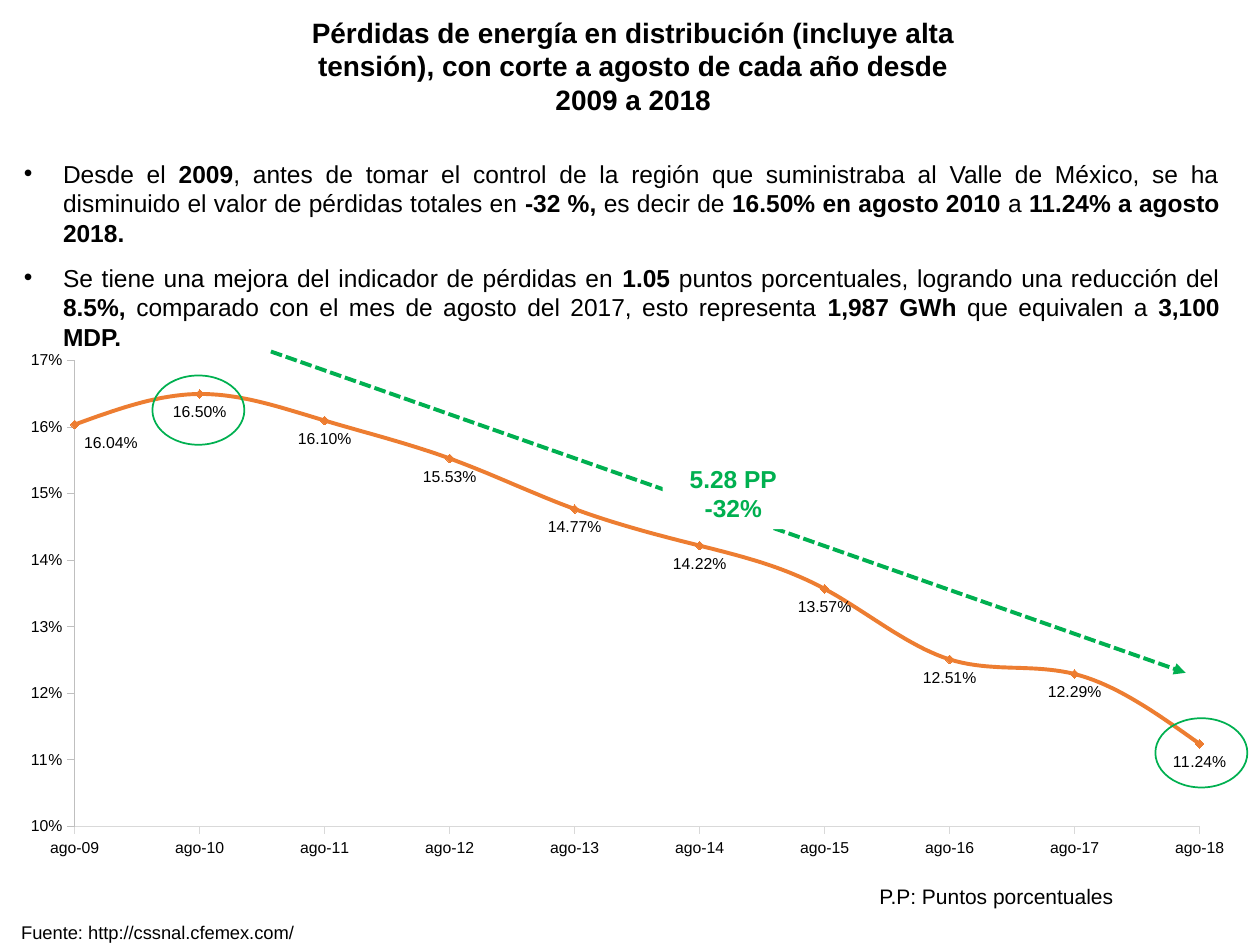
from dataclasses import dataclass

from lxml import etree
from pptx import Presentation
from pptx.chart.data import CategoryChartData
from pptx.dml.color import RGBColor
from pptx.enum.chart import (XL_AXIS_CROSSES, XL_CHART_TYPE, XL_LABEL_POSITION,
                             XL_MARKER_STYLE, XL_TICK_MARK)
from pptx.enum.dml import MSO_LINE
from pptx.enum.shapes import MSO_CONNECTOR, MSO_SHAPE
from pptx.enum.text import MSO_ANCHOR, MSO_AUTO_SIZE, PP_ALIGN
from pptx.oxml import parse_xml
from pptx.oxml.ns import nsdecls, qn
from pptx.util import Inches, Pt

COLORS = {"text": "000000", "line": "ED7D31", "accent": "00B050", "paper": "FFFFFF",
          "category axis": "D9D9D9", "value axis": "BFBFBF"}
FONT = "Arial"
COLUMNS, ROWS = 100, 75


@dataclass(frozen=True)
class Box:
    """A place on the slide, in grid columns and rows."""
    left: float
    top: float
    width: float
    height: float

    def lengths(self) -> tuple:
        return (column(self.left), row(self.top), column(self.width), row(self.height))


@dataclass(frozen=True)
class Note:
    box: Box
    text: str
    size: float


TITLE = ("Pérdidas de energía en distribución (incluye alta tensión), "
         "con corte a agosto de cada año desde 2009 a 2018")
# Every second piece of a bullet is bold
BULLETS = [
    ["Desde el ", "2009", ", antes de tomar el control de la región que suministraba al Valle "
     "de México, se ha disminuido el valor de pérdidas totales en ", "-32 %, ",
     "es decir de ", "16.50% en agosto 2010 ", "a ", "11.24% a agosto 2018."],
    ["Se tiene una mejora del indicador de pérdidas en ", "1.05",
     " puntos porcentuales, logrando una reducción del ", "8.5%, ",
     "comparado con el mes de agosto del 2017, esto representa ", "1,987 GWh ",
     "que equivalen a ", "3,100 MDP."],
]
LOSSES = [0.1604, 0.165, 0.161, 0.1553, 0.1477, 0.1422, 0.1357, 0.1251, 0.1229, 0.1124]
CIRCLES = [Box(left, top, 7.3, 5.5) for left, top in ((12.1, 29.8), (91.7, 57))]
NOTES = [Note(Box(68.8, 69.6, 25.9, 3), "P.P: Puntos porcentuales", 12),
         Note(Box(0.7, 72.6, 81.8, 2.4), "Fuente: http://cssnal.cfemex.com/", 10.5)]

deck = Presentation()
deck.slide_width, deck.slide_height = Inches(10), Inches(7.5)


def column(count: float) -> int:
    return round(deck.slide_width * count / COLUMNS)


def row(count: float) -> int:
    return round(deck.slide_height * count / ROWS)


def color(name: str) -> RGBColor:
    return RGBColor.from_string(COLORS[name])


def set_font(font, size: float, name: str = "text", bold: bool = False) -> None:
    font.name, font.size, font.bold = FONT, Pt(size), bold
    font.color.rgb = color(name)


def place(shape, box: Box) -> None:
    shape.left, shape.top, shape.width, shape.height = box.lengths()


def prepare(frame, anchor=MSO_ANCHOR.TOP) -> None:
    frame.word_wrap, frame.auto_size = True, MSO_AUTO_SIZE.NONE
    frame.vertical_anchor = anchor


def layout_xml(**values):
    parts = "".join(f'<c:{tag} val="{value}"/>' for tag, value in values.items())
    return parse_xml(f'<c:layout {nsdecls("c")}><c:manualLayout>{parts}</c:manualLayout></c:layout>')


def add_title(page) -> None:
    title = page.shapes.title
    place(title, Box(21.5, 1.6, 57.5, 7.2))
    prepare(title.text_frame, MSO_ANCHOR.MIDDLE)
    title.text_frame.text = TITLE
    para = title.text_frame.paragraphs[0]
    para.alignment = PP_ALIGN.CENTER
    set_font(para.font, 16, bold=True)


def add_bullets(page) -> None:
    body = page.placeholders[1]
    place(body, Box(0.9, 12.1, 96.9, 18.8))
    frame = body.text_frame
    prepare(frame)
    for index, pieces in enumerate(BULLETS):
        para = frame.add_paragraph() if index else frame.paragraphs[0]
        para.alignment = PP_ALIGN.JUSTIFY
        para.space_before = Pt(9 * index)
        properties = para._p.get_or_add_pPr()
        properties.set("marL", str(Inches(0.31)))
        properties.set("indent", str(-Inches(0.31)))
        etree.SubElement(properties, qn("a:buChar")).set("char", "•")
        set_font(para.font, 14)
        for position, piece in enumerate(pieces):
            span = para.add_run()
            span.text = piece
            span.font.bold = position % 2 == 1


def style_axis(axis, name: str) -> None:
    axis.has_major_gridlines = False
    axis.major_tick_mark, axis.minor_tick_mark = XL_TICK_MARK.OUTSIDE, XL_TICK_MARK.NONE
    axis.format.line.color.rgb = color(name)
    axis.format.line.width = Pt(0.75)
    set_font(axis.tick_labels.font, 9)


def add_loss_chart(page) -> None:
    data = CategoryChartData(number_format="0.00%")
    data.categories = [f"ago-{year:02}" for year in range(9, 19)]
    data.add_series("Series 1", LOSSES)
    holder = page.shapes.add_chart(XL_CHART_TYPE.LINE_MARKERS,
                                   *Box(2.1, 27.9, 95.8, 41.6).lengths(), data)
    page.shapes._spTree.insert(2, holder._element)  # behind the text
    chart = holder.chart
    chart.has_legend = chart.has_title = False
    set_font(chart.font, 10)

    # Axes and plot area; the line starts on the value axis
    style_axis(chart.category_axis, "category axis")
    chart.category_axis.crosses = XL_AXIS_CROSSES.AUTOMATIC
    values = chart.value_axis
    style_axis(values, "value axis")
    values.minimum_scale, values.maximum_scale, values.major_unit = 0.1, 0.17, 0.01
    values.tick_labels.number_format = "0%"
    values.tick_labels.number_format_is_linked = False
    values._element.find(qn("c:crosses")).addnext(
        parse_xml(f'<c:crossBetween {nsdecls("c")} val="midCat"/>'))
    area = chart._chartSpace.chart.plotArea
    for old in area.findall(qn("c:layout")):
        area.remove(old)
    area.insert(0, layout_xml(layoutTarget="inner", xMode="edge", yMode="edge",
                              x=0.04, y=0.015, w=0.932, h=0.891))

    # Line and markers
    chart.plots[0].vary_by_categories = False
    series = chart.plots[0].series[0]
    series.smooth = True
    series.format.line.color.rgb = color("line")
    series.format.line.width = Pt(2.25)
    series.marker.style, series.marker.size = XL_MARKER_STYLE.DIAMOND, 5
    series.marker.format.fill.solid()
    series.marker.format.fill.fore_color.rgb = color("line")
    series.marker.format.line.color.rgb = color("line")

    # Labels; the first one is moved clear of the axis
    labels = series.data_labels
    labels.show_value, labels.position = True, XL_LABEL_POSITION.BELOW
    labels.number_format, labels.number_format_is_linked = "0.00%", False
    set_font(labels.font, 9)
    first = series.points[0].data_label
    set_font(first.font, 9)
    first.position = XL_LABEL_POSITION.BELOW
    element = labels._element.find(qn("c:dLbl"))
    element.insert(1, layout_xml(x=0.03, y=0))
    element.insert(2, parse_xml(
        f'<c:numFmt {nsdecls("c")} formatCode="0.00%" sourceLinked="0"/>'))


def add_trend_arrow(page) -> None:
    arrow = page.shapes.add_connector(MSO_CONNECTOR.STRAIGHT, column(21.5), row(27.9),
                                      column(94.1), row(53.4))
    arrow.line.color.rgb = color("accent")
    arrow.line.width, arrow.line.dash_style = Pt(2.25), MSO_LINE.SQUARE_DOT
    etree.SubElement(arrow.line._get_or_add_ln(), qn("a:tailEnd")).set("type", "triangle")
    etree.SubElement(arrow._element.spPr, qn("a:effectLst"))


def add_change_label(page) -> None:
    label = page.shapes.add_shape(MSO_SHAPE.RECTANGLE, *Box(52.6, 36.3, 11.2, 5.7).lengths())
    label.shadow.inherit = False
    label.fill.solid()
    label.fill.fore_color.rgb = color("paper")
    label.line.fill.background()
    prepare(label.text_frame)
    label.text_frame.text = "5.28 PP\n-32%"
    for para in label.text_frame.paragraphs:
        para.alignment = PP_ALIGN.CENTER
        set_font(para.font, 14, "accent", bold=True)


def add_circle(page, box: Box) -> None:
    circle = page.shapes.add_shape(MSO_SHAPE.OVAL, *box.lengths())
    circle.shadow.inherit = False
    circle.fill.background()
    circle.line.color.rgb = color("accent")
    circle.line.width = Pt(1)


def add_note(page, note: Note) -> None:
    frame = page.shapes.add_textbox(*note.box.lengths()).text_frame
    prepare(frame)
    frame.text = note.text
    set_font(frame.paragraphs[0].font, note.size)


def main() -> None:
    page = deck.slides.add_slide(deck.slide_layouts[1])
    add_title(page)
    add_bullets(page)
    add_loss_chart(page)
    add_trend_arrow(page)
    add_change_label(page)
    for box in CIRCLES:
        add_circle(page, box)
    for note in NOTES:
        add_note(page, note)
    deck.save("out.pptx")


if __name__ == "__main__":
    main()
